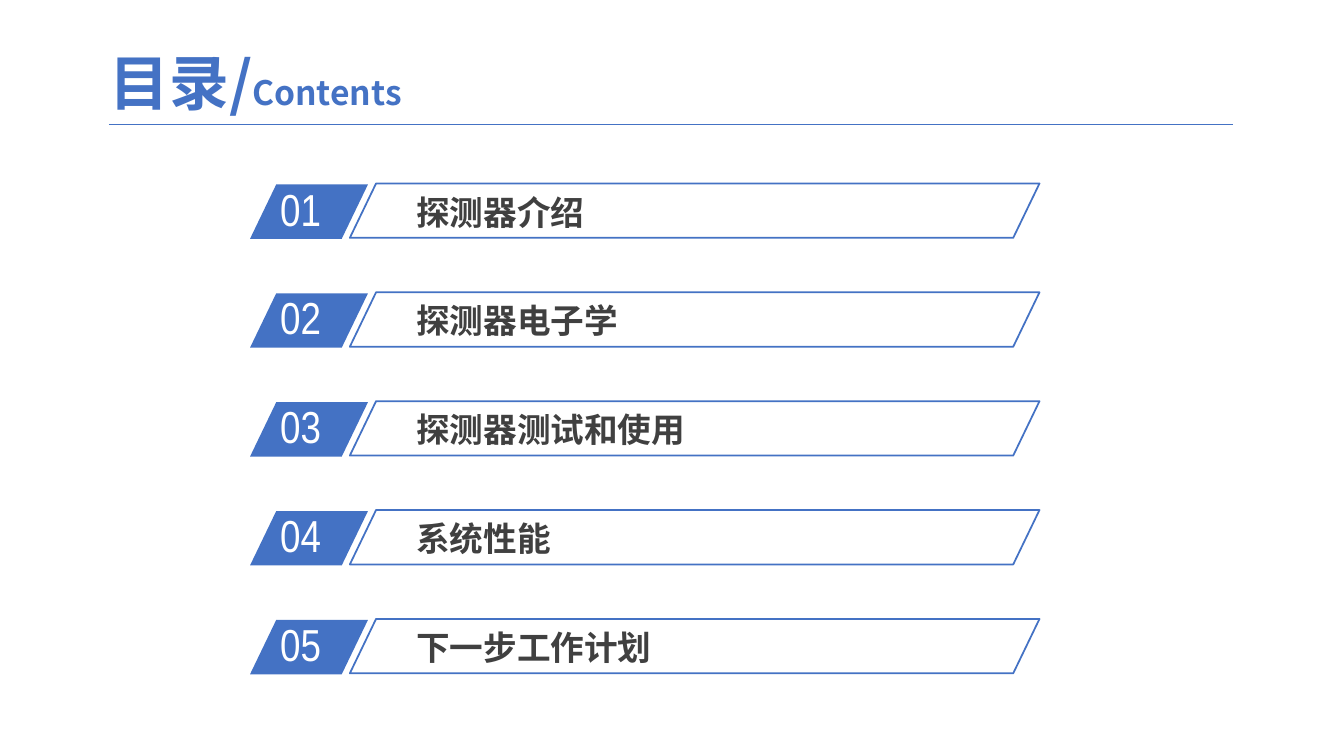
from lxml.etree import SubElement
from pptx import Presentation
from pptx.dml.color import RGBColor
from pptx.enum.shapes import MSO_CONNECTOR, MSO_SHAPE
from pptx.enum.text import MSO_ANCHOR, MSO_AUTO_SIZE, PP_ALIGN
from pptx.oxml.ns import qn
from pptx.util import Emu, Pt

BLUE = RGBColor(0x44, 0x72, 0xC4)
GRAY = RGBColor(0x40, 0x40, 0x40)
WHITE = RGBColor(0xFF, 0xFF, 0xFF)

PX_PER_INCH = 100
EMU_PER_PX = 914400 // PX_PER_INCH
HEADING_FONT = "Noto Sans CJK SC"
NUMBER_FONT = "Arial Narrow"
SLANT = 0.482
FIRST_ROW_TOP = 183
ROW_PITCH = 108
ROW_HEIGHT = 54

TITLE_FORMAT = {"name": HEADING_FONT, "size": Pt(42.7), "bold": True, "color": BLUE}
SUBTITLE_FORMAT = {**TITLE_FORMAT, "size": Pt(24)}
NUMBER_FORMAT = {"name": NUMBER_FONT, "size": Pt(32), "color": WHITE}
TOPIC_FORMAT = {"name": HEADING_FONT, "size": Pt(24), "bold": True, "color": GRAY}

TOPICS = ["探测器介绍", "探测器电子学", "探测器测试和使用", "系统性能", "下一步工作计划"]


def px(*lengths):
    return [Emu(length * EMU_PER_PX) for length in lengths]


def add_span(para, text, format_values):
    span = para.add_run()
    span.text = text
    for key, value in format_values.items():
        if key == "color":
            span.font.color.rgb = value
        else:
            setattr(span.font, key, value)
    east_asian = SubElement(span.font._element, qn("a:ea"))
    east_asian.set("typeface", format_values["name"])


def fill_title(page):
    title = page.shapes.title
    title.left, title.top, title.width, title.height = px(89, 45, 329, 72)
    frame = title.text_frame
    frame.auto_size = MSO_AUTO_SIZE.NONE
    frame.vertical_anchor = MSO_ANCHOR.MIDDLE
    para = frame.paragraphs[0]
    para.alignment = PP_ALIGN.CENTER
    add_span(para, "目录/", TITLE_FORMAT)
    add_span(para, "Contents", SUBTITLE_FORMAT)


def add_rule(page):
    rule = page.shapes.add_connector(MSO_CONNECTOR.STRAIGHT, *px(108, 123, 1223, 123))
    rule.line.color.rgb = BLUE
    rule.line.width = Pt(0.5)
    SubElement(rule._element.spPr, qn("a:effectLst"))


def add_parallelogram(group, left, top, width):
    shape = group.shapes.add_shape(
        MSO_SHAPE.PARALLELOGRAM, *px(left, top, width, ROW_HEIGHT)
    )
    shape.adjustments[0] = SLANT
    shape.shadow.inherit = False
    return shape


def add_label(group, left, top, width, height, text, format_values):
    box = group.shapes.add_textbox(*px(left, top, width, height))
    frame = box.text_frame
    frame.word_wrap = True
    frame.auto_size = MSO_AUTO_SIZE.SHAPE_TO_FIT_TEXT
    add_span(frame.paragraphs[0], text, format_values)


def add_number(page, top, number):
    group = page.shapes.add_group_shape()
    badge = add_parallelogram(group, 248, top, 117)
    badge.fill.solid()
    badge.fill.fore_color.rgb = BLUE
    badge.line.fill.background()
    add_label(group, 268, top - 8, 112, 64, f"{number:02d}", NUMBER_FORMAT)


def add_topic(page, top, topic):
    group = page.shapes.add_group_shape()
    add_label(group, 403, top + 2, 617, 50, topic, TOPIC_FORMAT)
    bar = add_parallelogram(group, 347, top - 1, 684)
    bar.fill.background()
    bar.line.color.rgb = BLUE
    bar.line.width = Pt(1.25)


def main():
    deck = Presentation()
    deck.slide_width, deck.slide_height = px(1333, 750)
    page = deck.slides.add_slide(deck.slide_layouts.get_by_name("Title Only"))
    fill_title(page)
    add_rule(page)
    for index, topic in enumerate(TOPICS):
        top = FIRST_ROW_TOP + index * ROW_PITCH
        add_number(page, top, index + 1)
        add_topic(page, top, topic)
    deck.save("out.pptx")


if __name__ == "__main__":
    main()
